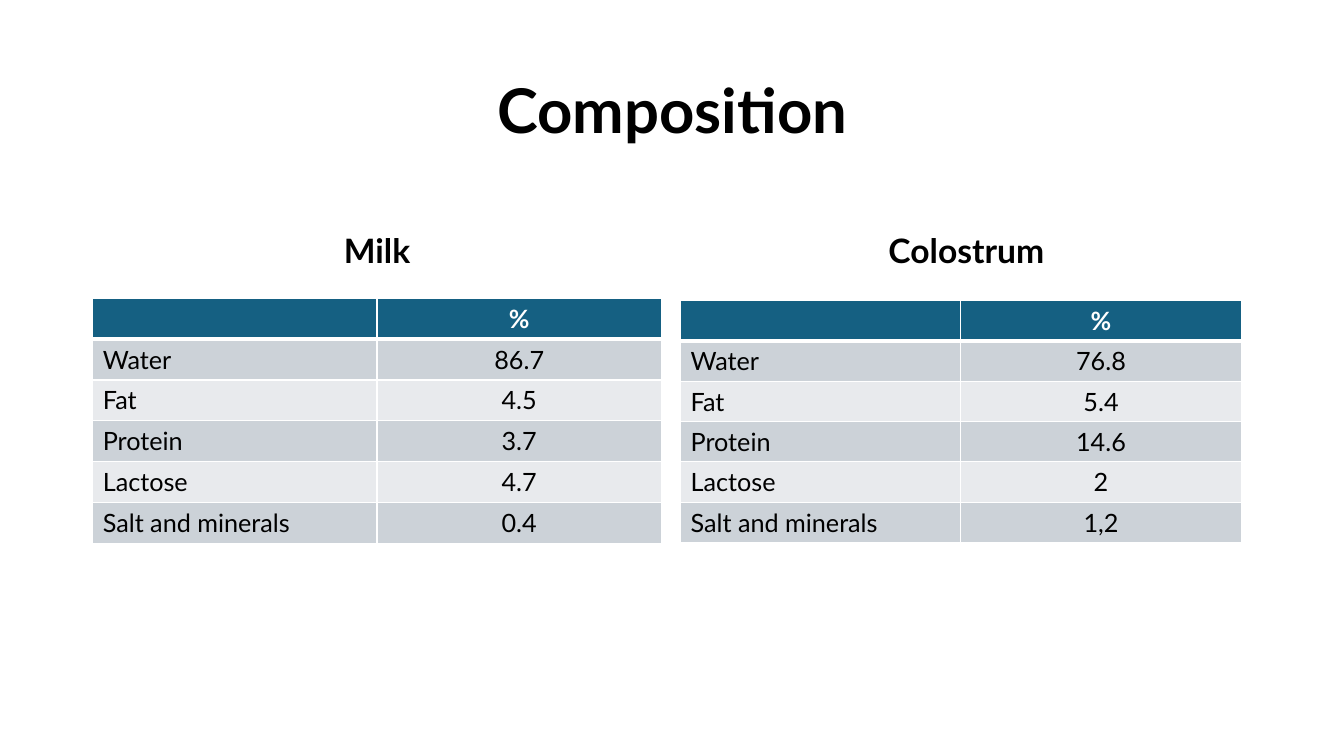
import pptx
import pptx.util
import pptx.dml.color
import pptx.enum.text
import pptx.oxml
import pptx.oxml.ns
from dataclasses import dataclass

TITLE = "Composition"
NUTRIENTS = ["Water", "Fat", "Protein", "Lactose", "Salt and minerals"]
COMPOSITIONS = [
    {"name": "Milk", "left": 0.92, "heading_width": 5.64, "top": 2.96,
     "column": 2.82, "row": 0.405, "percent": ["86.7", "4.5", "3.7", "4.7", "0.4"]},
    {"name": "Colostrum", "left": 6.75, "heading_width": 5.67, "top": 2.98,
     "column": 2.78, "row": 0.4, "percent": ["76.8", "5.4", "14.6", "2", "1,2"]},
]


@dataclass(frozen=True)
class Theme:
    font: str = "Lato"
    title_size: int = 44
    heading_size: int = 24
    cell_size: int = 18
    text: str = "000000"
    light: str = "FFFFFF"
    header: str = "156082"
    bands: tuple = ("CCD2D8", "E8EAED")
    border: int = 1
    header_border: int = 3


THEME = Theme()
CENTER = pptx.enum.text.PP_ALIGN.CENTER
LEFT = pptx.enum.text.PP_ALIGN.LEFT
ANCHOR = pptx.enum.text.MSO_ANCHOR
Inches = pptx.util.Inches
Pt = pptx.util.Pt


def rgb(color):
    return pptx.dml.color.RGBColor.from_string(color)


def write(paragraph, text, size, color, bold, alignment):
    paragraph.alignment = alignment
    run = paragraph.add_run()
    run.text = text
    run.font.name = THEME.font
    run.font.size = Pt(size)
    run.font.bold = bold
    run.font.color.rgb = rgb(color)


def add_heading(slide, box, text, size, anchor, space_before):
    frame = slide.shapes.add_textbox(*map(Inches, box)).text_frame
    frame.word_wrap = True
    frame.vertical_anchor = anchor
    paragraph = frame.paragraphs[0]
    paragraph.line_spacing = 0.9
    paragraph.space_before = Pt(space_before)
    write(paragraph, text, size, THEME.text, True, CENTER)


def set_borders(cell, top, bottom):
    properties = cell._tc.get_or_add_tcPr()
    widths = {"L": THEME.border, "R": THEME.border, "T": top, "B": bottom}
    for index, (side, width) in enumerate(widths.items()):
        line = pptx.oxml.parse_xml(
            f'<a:ln{side} {pptx.oxml.ns.nsdecls("a")} w="{Pt(width)}">'
            f'<a:solidFill><a:srgbClr val="{THEME.light}"/></a:solidFill></a:ln{side}>')
        properties.insert(index, line)


def add_composition_table(slide, composition):
    rows = [("", "%")] + list(zip(NUTRIENTS, composition["percent"]))
    columns = len(rows[0])
    table = slide.shapes.add_table(
        len(rows), columns, Inches(composition["left"]), Inches(composition["top"]),
        Inches(composition["column"] * columns), Inches(composition["row"] * len(rows))).table
    for row_index, values in enumerate(rows):
        is_header = row_index == 0
        fill = THEME.header if is_header else THEME.bands[(row_index - 1) % 2]
        color = THEME.light if is_header else THEME.text
        top = THEME.header_border if row_index == 1 else THEME.border
        bottom = THEME.header_border if is_header else THEME.border
        for column_index, value in enumerate(values):
            cell = table.cell(row_index, column_index)
            cell.fill.solid()
            cell.fill.fore_color.rgb = rgb(fill)
            set_borders(cell, top, bottom)
            if value:
                write(cell.text_frame.paragraphs[0], value, THEME.cell_size, color,
                      is_header, CENTER if column_index else LEFT)


def main():
    presentation = pptx.Presentation()
    presentation.slide_width = Inches(13.33)
    presentation.slide_height = Inches(7.5)
    slide = presentation.slides.add_slide(presentation.slide_layouts[6])
    add_heading(slide, (0.92, 0.4, 11.5, 1.45), TITLE, THEME.title_size, ANCHOR.MIDDLE, 0)
    for composition in COMPOSITIONS:
        box = (composition["left"], 1.84, composition["heading_width"], 0.9)
        add_heading(slide, box, composition["name"], THEME.heading_size, ANCHOR.BOTTOM, 10)
        add_composition_table(slide, composition)
    presentation.save("out.pptx")


if __name__ == "__main__":
    main()
